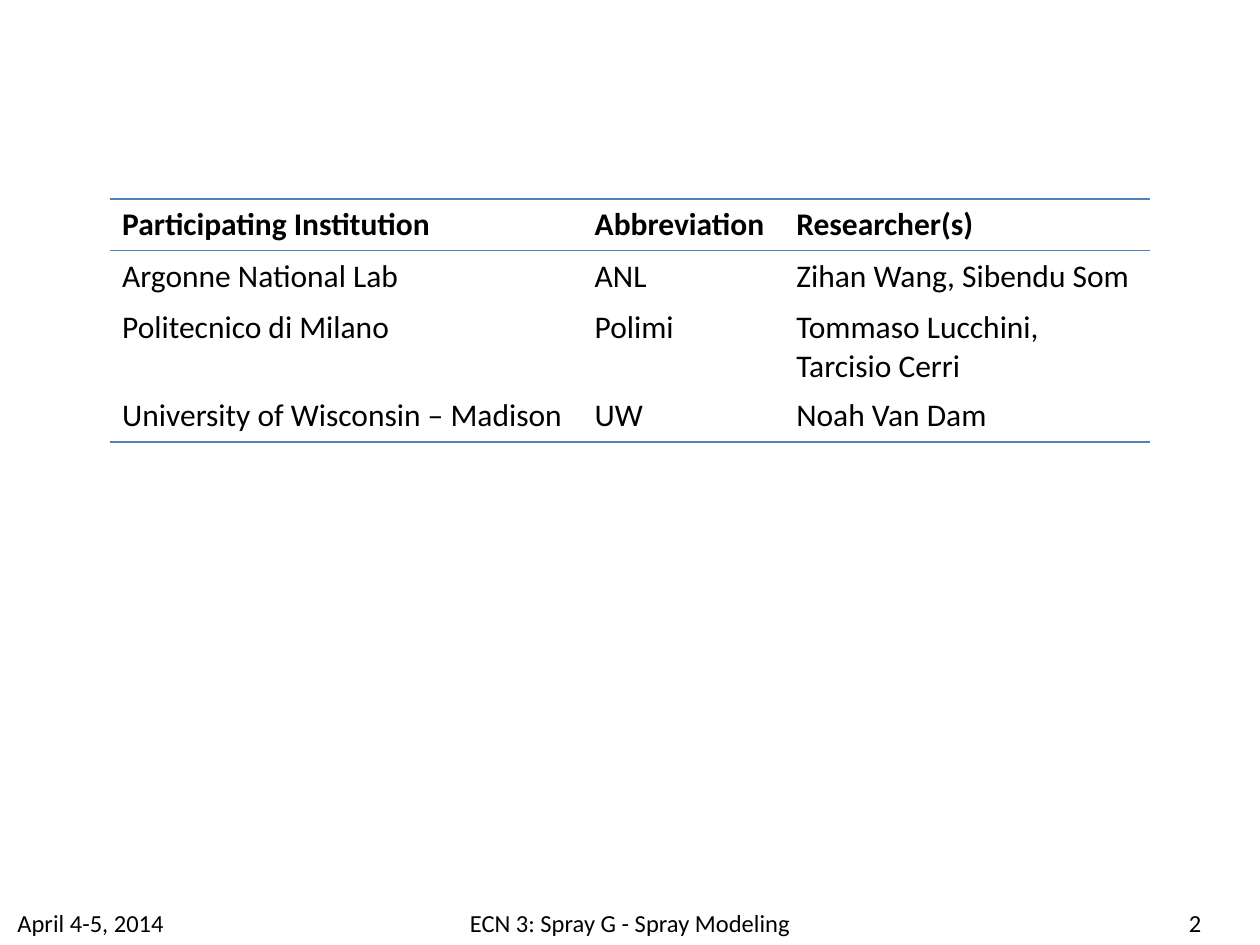
from typing import NamedTuple

from lxml.etree import SubElement
from pptx import Presentation
from pptx.dml.color import RGBColor
from pptx.enum.text import MSO_ANCHOR, PP_ALIGN as Align
from pptx.oxml.ns import qn
from pptx.util import Inches, Pt

COLORS = {"text": "000000", "rule": "4F81BD", "background": "FFFFFF"}
FONT = "Calibri"
NO_STYLE_NO_GRID = "{2D5ABB26-0587-4C30-8999-92F81FD0307C}"


class FooterItem(NamedTuple):
    text: str
    left: float
    width: float
    align: Align


class Participant(NamedTuple):
    institution: str
    abbreviation: str
    researchers: str


FOOTER = [
    FooterItem("ECN 3: Spray G - Spray Modeling", 3.11, 3.78, Align.CENTER),
    FooterItem("2", 8.97, 1.03, Align.CENTER),
    FooterItem("April 4-5, 2014", 0.04, 1.65, Align.LEFT),
]
FOOTER_TOP, FOOTER_HEIGHT = 7.16, 0.34

# The first row is the header
ROWS = [
    Participant("Participating Institution", "Abbreviation", "Researcher(s)"),
    Participant("Argonne National Lab", "ANL", "Zihan Wang, Sibendu Som"),
    Participant("Politecnico di Milano", "Polimi", "Tommaso Lucchini, Tarcisio Cerri"),
    Participant("University of Wisconsin – Madison", "UW", "Noah Van Dam"),
]
COL_WIDTHS = [3.75, 1.6, 2.91]
ROW_HEIGHTS = [0.41, 0.41, 0.69, 0.41]


def write_text(tf, text: str, size: int, bold: bool = False, align: Align = Align.LEFT) -> None:
    p = tf.paragraphs[0]
    p.alignment = align
    r = p.add_run()
    r.text = text
    for name, value in {"name": FONT, "size": Pt(size), "bold": bold}.items():
        setattr(r.font, name, value)
    r.font.color.rgb = RGBColor.from_string(COLORS["text"])


def add_footer_item(slide, item: FooterItem) -> None:
    box = slide.shapes.add_textbox(Inches(item.left), Inches(FOOTER_TOP),
                                   Inches(item.width), Inches(FOOTER_HEIGHT))
    box.text_frame.word_wrap = True
    write_text(box.text_frame, item.text, 14, align=item.align)


def add_rule(cell, side: str) -> None:
    """Draw one cell border; side is lnT or lnB."""
    ln = SubElement(cell._tc.get_or_add_tcPr(), qn(f"a:{side}"), w=str(Pt(1)))
    fill = SubElement(ln, qn("a:solidFill"))
    SubElement(fill, qn("a:srgbClr"), val=COLORS["rule"])


def add_participants_table(slide, left: float, top: float) -> None:
    table = slide.shapes.add_table(
        len(ROWS), len(COL_WIDTHS), Inches(left), Inches(top),
        Inches(sum(COL_WIDTHS)), Inches(sum(ROW_HEIGHTS))).table
    table.horz_banding = False
    table._tbl.tblPr.find(qn("a:tableStyleId")).text = NO_STYLE_NO_GRID
    for column, width in zip(table.columns, COL_WIDTHS):
        column.width = Inches(width)
    for row, height in zip(table.rows, ROW_HEIGHTS):
        row.height = Inches(height)

    # Rules above and below the header, and below the last row
    rules = {0: ["lnT", "lnB"], len(ROWS) - 1: ["lnB"]}
    for i, participant in enumerate(ROWS):
        for j, text in enumerate(participant):
            cell = table.cell(i, j)
            cell.vertical_anchor = MSO_ANCHOR.TOP
            write_text(cell.text_frame, text, 18, bold=i == 0)
            for side in rules.get(i, []):
                add_rule(cell, side)
            cell.fill.background()


def main() -> None:
    prs = Presentation()
    prs.slide_width, prs.slide_height = Inches(10), Inches(7.5)
    s = prs.slides.add_slide(prs.slide_layouts[6])
    s.background.fill.solid()
    s.background.fill.fore_color.rgb = RGBColor.from_string(COLORS["background"])

    # Footer
    for item in FOOTER:
        add_footer_item(s, item)

    # Participants
    add_participants_table(s, 0.87, 1.58)
    prs.save("out.pptx")


if __name__ == "__main__":
    main()
